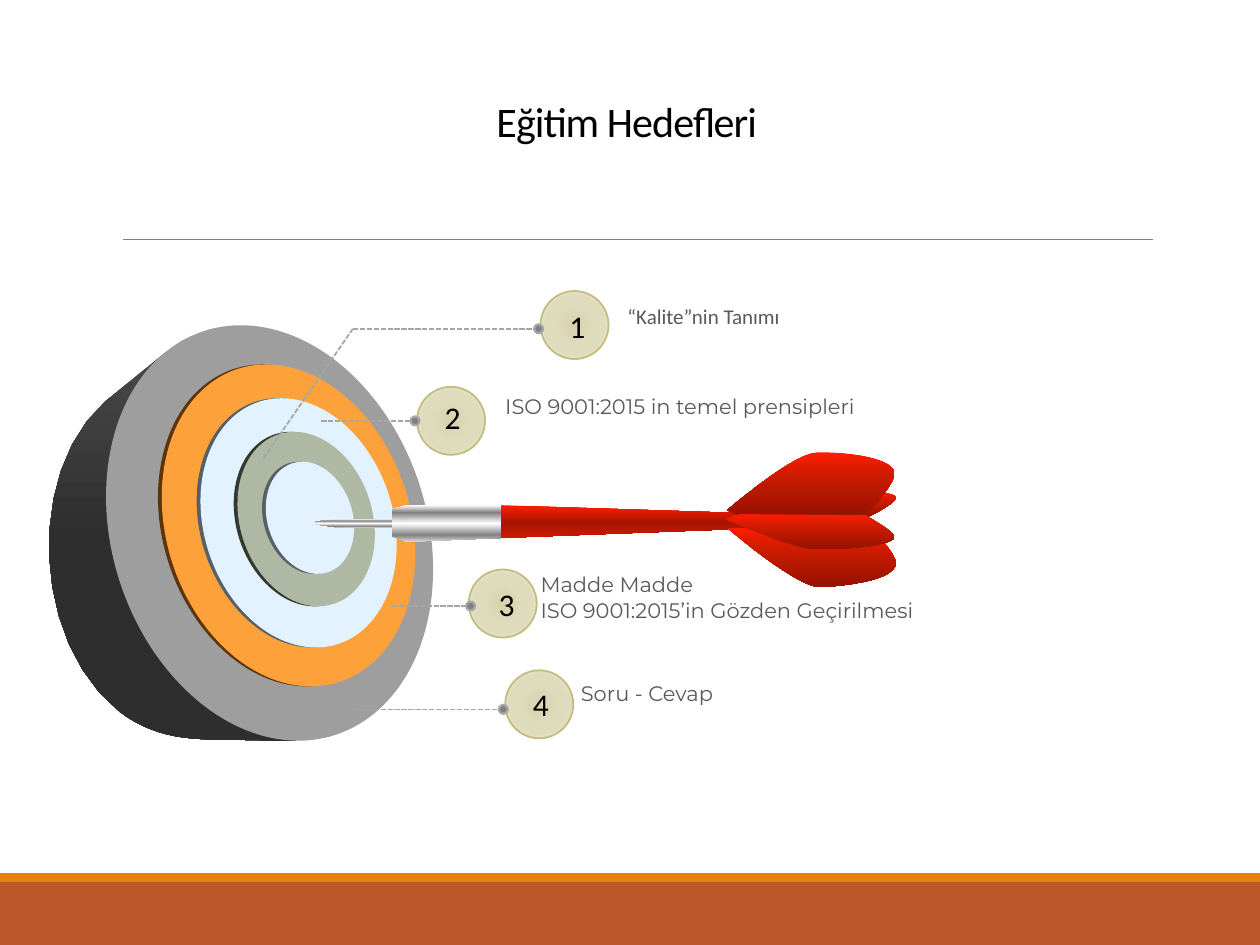
import pptx
import pptx.dml.color
import pptx.enum.shapes
import pptx.enum.text
import pptx.oxml.ns
import pptx.util
from lxml import etree

Inches = pptx.util.Inches
Pt = pptx.util.Pt
RGBColor = pptx.dml.color.RGBColor
qn = pptx.oxml.ns.qn
OVAL = pptx.enum.shapes.MSO_SHAPE.OVAL
RECTANGLE = pptx.enum.shapes.MSO_SHAPE.RECTANGLE
TOP = pptx.enum.text.MSO_ANCHOR.TOP
MIDDLE = pptx.enum.text.MSO_ANCHOR.MIDDLE

BLACK = RGBColor(0x00, 0x00, 0x00)
TEXT_GRAY = RGBColor(0x59, 0x59, 0x59)
GRAY = RGBColor(0x80, 0x80, 0x80)
LEADER_GRAY = RGBColor(0xA6, 0xA6, 0xA6)
RUST = RGBColor(0xBD, 0x58, 0x2C)
ORANGE = RGBColor(0xE4, 0x83, 0x12)
BADGE_EDGE = RGBColor(0xC2, 0xBC, 0x80)
RING_GRAY = RGBColor(0x9E, 0x9E, 0x9E)
RING_ORANGE = RGBColor(0xFD, 0xA2, 0x3A)
RING_BLUE = RGBColor(0xE2, 0xF2, 0xFE)
RING_GREEN = RGBColor(0xAE, 0xB8, 0xA3)
RIM_BROWN = RGBColor(0x5C, 0x34, 0x08)
RIM_SLATE = RGBColor(0x55, 0x60, 0x6A)
RIM_OLIVE = RGBColor(0x35, 0x38, 0x2F)


def stops(*pairs):
    return [(position, RGBColor.from_string(color)) for position, color in pairs]


BADGE_FILL = stops((0, "D7D3AF"), (45, "DFDBBD"), (100, "E5E1C1"))
SIDE_FILL = stops((0, "4A4A4A"), (50, "2E2E2E"), (100, "303030"))
SHAFT_FILL = stops((0, "FF1C00"), (54, "A81400"), (100, "CC1B00"))
FIN_FILL = stops((0, "FF1C00"), (37, "CC1B00"), (100, "961200"))
METAL_FILL = stops((0, "FFFFFF"), (20, "808080"), (50, "FFFFFF"), (82, "808080"), (100, "D9D9D9"))

BADGE_SIZE = 0.54
DOT_SIZE = 0.07
TILT = -18
FACE_WIDTH, FACE_HEIGHT = 2.5, 3.37

RINGS = [
    (2.14, 4.23, 1, RING_GRAY, None),
    (2.29, 4.17, 0.775, RING_ORANGE, RIM_BROWN),
    (2.37, 4.15, 0.6, RING_BLUE, RIM_SLATE),
    (2.43, 4.12, 0.42, RING_GREEN, RIM_OLIVE),
    (2.46, 4.11, 0.27, RING_BLUE, RIM_SLATE),
]

TARGET_SIDE = [(1.45, 2.7), (1.31, 2.8), (0.83, 3.19),
               (0.2, 3.75, 0.25, 5.1, 0.95, 5.65),
               (1.19, 5.83, 1.43, 5.87, 1.75, 5.87),
               (2.35, 5.88), (2.1, 4.2)]

DART = [
    ([(3.98, 4.01), (3.98, 4.27), (6.11, 4.19), (6.11, 4.08)], SHAFT_FILL),
    ([(5.77, 4.19), (5.77, 4.19, 6.31, 4.65, 6.5, 4.66),
      (6.74, 4.65, 7.11, 4.6, 7.11, 4.47), (7.11, 4.43, 7.06, 4.36, 7.02, 4.31),
      (6.89, 4.34, 6.66, 4.35, 6.49, 4.35), (6.37, 4.35, 6.12, 4.26, 5.94, 4.19)], FIN_FILL),
    ([(7.02, 3.91), (6.95, 4, 6.87, 4.09, 6.87, 4.09), (6.89, 4.1),
      (6.94, 4.08, 7.11, 3.99, 7.11, 3.95), (7.11, 3.93, 7.07, 3.92, 7.02, 3.91)], FIN_FILL),
    ([(6.49, 3.59), (6.31, 3.59, 5.82, 4.01, 5.77, 4.05), (5.87, 4.09), (6.87, 4.09),
      (6.87, 4.09, 7.1, 3.85, 7.1, 3.76), (7.1, 3.64, 6.74, 3.59, 6.51, 3.59)], FIN_FILL),
    ([(6.87, 4.09), (5.87, 4.08), (5.76, 4.12), (5.76, 4.12, 6.3, 4.36, 6.49, 4.36),
      (6.73, 4.36, 7.1, 4.33, 7.1, 4.26), (7.1, 4.22, 6.87, 4.09, 6.87, 4.09)], FIN_FILL),
    ([(3.22, 4.01), (3.22, 4.3), (3.98, 4.27), (3.98, 4.01)], METAL_FILL),
    ([(3.13, 4.26), (3.12, 4.26, 3.11, 4.25, 3.11, 4.24), (3.11, 4.06),
      (3.11, 4.05, 3.12, 4.04, 3.12, 4.04), (3.22, 4.01), (3.22, 4.3)], METAL_FILL),
    ([(2.7, 4.12), (2.5, 4.14), (2.5, 4.16), (2.7, 4.19), (3.11, 4.19), (3.11, 4.12)], METAL_FILL),
]

GOALS = [
    ("1", "“Kalite”nin Tanımı", "Calibri", (4.29, 2.31), (4.42, 2.39),
     (4.98, 2.41, 2.85, 0.2), [(2.09, 3.64), (2.8, 2.61), (4.24, 2.61)]),
    ("2", "ISO 9001:2015 in temel prensipleri", "Montserrat", (3.31, 3.07), (3.43, 3.11),
     (4.01, 3.12, 3.28, 0.2), [(2.55, 3.34), (3.26, 3.34)]),
    ("3", "Madde Madde\nISO 9001:2015’in Gözden Geçirilmesi", "Montserrat", (3.72, 4.52), (3.86, 4.59),
     (4.29, 4.54, 3.39, 0.4), [(3.11, 4.81), (3.7, 4.81)]),
    ("4", "Soru - Cevap", "Montserrat", (4.01, 5.32), (4.13, 5.39),
     (4.61, 5.4, 1.69, 0.2), [(2.8, 5.63), (3.96, 5.63)]),
]


def trace(outline, steps=12):
    points = [outline[0]]
    for segment in outline[1:]:
        if len(segment) == 2:
            points.append(segment)
            continue
        nodes = [points[-1], segment[:2], segment[2:4], segment[4:]]
        for step in range(1, steps + 1):
            t = step / steps
            weights = ((1 - t) ** 3, 3 * t * (1 - t) ** 2, 3 * t * t * (1 - t), t ** 3)
            points.append(tuple(sum(w * node[axis] for w, node in zip(weights, nodes)) for axis in (0, 1)))
    return points


class SlideBuilder:
    def __init__(self, slide):
        self.slide = slide

    def paint(self, shape, fill, line=None, line_width=1):
        shape.shadow.inherit = False
        if isinstance(fill, list):
            self.gradient(shape, fill)
        else:
            shape.fill.solid()
            shape.fill.fore_color.rgb = fill
        if line is None:
            shape.line.fill.background()
        else:
            shape.line.color.rgb = line
            shape.line.width = Pt(line_width)

    def gradient(self, shape, color_stops):
        shape.fill.gradient()
        element = shape._element.spPr.find(qn("a:gradFill"))
        for child in list(element):
            element.remove(child)
        stop_list = etree.SubElement(element, qn("a:gsLst"))
        for position, color in color_stops:
            stop = etree.SubElement(stop_list, qn("a:gs"), pos=str(position * 1000))
            etree.SubElement(stop, qn("a:srgbClr"), val=str(color))
        if color_stops is BADGE_FILL:
            circle = etree.SubElement(element, qn("a:path"), path="circle")
            etree.SubElement(circle, qn("a:fillToRect"), {side: "100000" for side in "ltrb"})
        else:
            etree.SubElement(element, qn("a:lin"), ang="5400000", scaled="0")

    def shape(self, kind, left, top, width, height, fill, line=None, line_width=1, rotation=0):
        shape = self.slide.shapes.add_shape(kind, Inches(left), Inches(top), Inches(width), Inches(height))
        shape.rotation = rotation
        self.paint(shape, fill, line, line_width)

    def tilted_disc(self, center_x, center_y, scale, fill):
        width, height = FACE_WIDTH * scale, FACE_HEIGHT * scale
        self.shape(OVAL, center_x - width / 2, center_y - height / 2, width, height, fill, rotation=TILT)

    def outline(self, outline, fill):
        points = [(Inches(x), Inches(y)) for x, y in trace(outline)]
        builder = self.slide.shapes.build_freeform(*points[0])
        builder.add_line_segments(points[1:], close=True)
        self.paint(builder.convert_to_shape(), fill)

    def line(self, start, end, color, width, dash=None):
        connector = self.slide.shapes.add_connector(
            pptx.enum.shapes.MSO_CONNECTOR.STRAIGHT, *(Inches(value) for value in start + end))
        connector.line.color.rgb = color
        connector.line.width = Pt(width)
        connector.line.dash_style = dash
        etree.SubElement(connector._element.spPr, qn("a:effectLst"))

    def format_text(self, text_frame, text, size, font, color, inset=0, anchor=TOP):
        text_frame.word_wrap = True
        text_frame.vertical_anchor = anchor
        text_frame.margin_left = text_frame.margin_right = Inches(inset)
        text_frame.margin_top = text_frame.margin_bottom = Inches(inset / 2)
        text_frame.text = text
        for paragraph in text_frame.paragraphs:
            paragraph.alignment = pptx.enum.text.PP_ALIGN.LEFT
            for run in paragraph.runs:
                run.font.size = Pt(size)
                run.font.name = font
                run.font.color.rgb = color

    def text(self, left, top, width, height, text, size, font, color, inset=0):
        box = self.slide.shapes.add_textbox(Inches(left), Inches(top), Inches(width), Inches(height))
        self.format_text(box.text_frame, text, size, font, color, inset)

    def title(self, text):
        title = self.slide.shapes.title
        title.left, title.top, title.width, title.height = (Inches(value) for value in (3.94, 0.79, 2.39, 0.4))
        self.format_text(title.text_frame, text, 24, "Calibri", BLACK, anchor=MIDDLE)
        paragraph = title.text_frame.paragraphs[0]
        paragraph.line_spacing = 0.85
        paragraph.runs[0]._r.get_or_add_rPr().set("spc", "-50")

    def goal(self, number, label, font, badge, number_at, label_at, leader):
        self.shape(OVAL, *badge, BADGE_SIZE, BADGE_SIZE, BADGE_FILL, BADGE_EDGE)
        for start, end in zip(leader, leader[1:]):
            self.line(start, end, LEADER_GRAY, 1, pptx.enum.dml.MSO_LINE.SQUARE_DOT)
        x, y = leader[-1]
        self.shape(OVAL, x, y - DOT_SIZE / 2, DOT_SIZE, DOT_SIZE, GRAY, LEADER_GRAY, 1.25)
        self.text(*number_at, 0.31, 0.4, number, 18, "Calibri", BLACK, 0.1)
        self.text(*label_at, label, 12, font, TEXT_GRAY)


def main():
    presentation = pptx.Presentation()
    presentation.slide_width, presentation.slide_height = Inches(10), Inches(7.5)
    builder = SlideBuilder(presentation.slides.add_slide(presentation.slide_layouts[5]))
    builder.shape(RECTANGLE, 0, 7, 10, 0.5, RUST)
    builder.shape(RECTANGLE, 0, 6.93, 10, 0.07, ORANGE)
    builder.line((0.98, 1.9), (9.15, 1.9), GRAY, 0.5)
    builder.title("Eğitim Hedefleri")
    builder.outline(TARGET_SIDE, SIDE_FILL)
    for center_x, center_y, scale, face, rim in RINGS:
        if rim is not None:
            builder.tilted_disc(center_x - 0.03, center_y, scale, rim)
        builder.tilted_disc(center_x, center_y, scale, face)
    for outline, fill in DART:
        builder.outline(outline, fill)
    for goal in GOALS:
        builder.goal(*goal)
    presentation.save("out.pptx")


if __name__ == "__main__":
    main()
